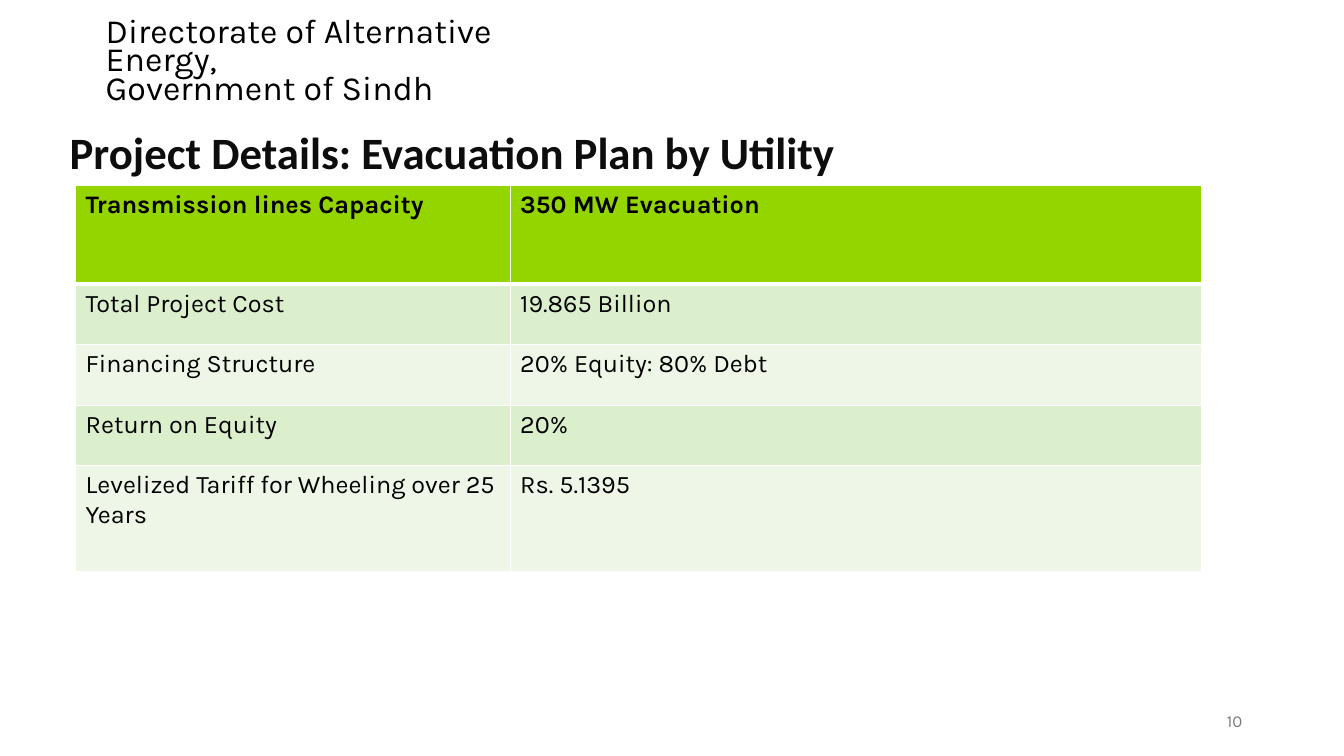
from dataclasses import dataclass

from lxml.etree import SubElement
from pptx import Presentation
from pptx.dml.color import RGBColor
from pptx.enum.text import MSO_ANCHOR, MSO_AUTO_SIZE, PP_ALIGN
from pptx.oxml import parse_xml
from pptx.oxml.ns import nsdecls, qn
from pptx.util import Inches, Pt


@dataclass(frozen=True)
class Theme:
    body_font: str = "Karla"
    title_font: str = "Calibri"
    black: str = "000000"
    title_color: str = "0D0D0D"
    grey: str = "797979"
    border: str = "FFFFFF"
    header_fill: str = "94D500"
    band_fills: tuple = ("DCEFCC", "EEF7E7")
    title_size: float = 32
    agency_size: float = 24.2
    table_size: float = 18
    number_size: float = 12


theme = Theme()


def write_text(frame, lines, size, color, font=theme.body_font, bold=False,
               align=PP_ALIGN.LEFT, line_spacing=None):
    frame.word_wrap = True
    for index, line in enumerate(lines):
        para = frame.add_paragraph() if index else frame.paragraphs[0]
        para.text = line
        para.alignment = align
        para.line_spacing = line_spacing
        para.font.name = font
        para.font.size = Pt(size)
        para.font.bold = bold
        para.font.color.rgb = RGBColor.from_string(color)


def set_borders(cell, top, bottom):
    """Draw the cell's four edges; top and bottom are widths in points."""
    properties = cell._tc.get_or_add_tcPr()
    edges = {"lnL": 1, "lnR": 1, "lnT": top, "lnB": bottom}
    for index, (tag, width) in enumerate(edges.items()):
        line = parse_xml(f'<a:{tag} {nsdecls("a")} w="{Pt(width)}"/>')
        fill = SubElement(line, qn("a:solidFill"))
        SubElement(fill, qn("a:srgbClr"), val=theme.border)
        properties.insert(index, line)


deck = Presentation()
deck.slide_width = Inches(13.33)
deck.slide_height = Inches(7.5)
page = deck.slides.add_slide(deck.slide_layouts[5])

# Title
title = page.shapes.title
title.left, title.top = Inches(0.59), Inches(1.2)
title.width, title.height = Inches(8.25), Inches(0.67)
title.text_frame.auto_size = MSO_AUTO_SIZE.NONE
title.text_frame.vertical_anchor = MSO_ANCHOR.MIDDLE
write_text(title.text_frame, ["Project Details: Evacuation Plan by Utility"],
           theme.title_size, theme.title_color, font=theme.title_font,
           bold=True, line_spacing=0.9)

# Agency name
agency = page.shapes.add_textbox(Inches(0.95), Inches(0.24), Inches(4.64), Inches(0.77))
agency.text_frame.vertical_anchor = MSO_ANCHOR.MIDDLE
write_text(agency.text_frame,
           ["Directorate of Alternative Energy,", "Government of Sindh"],
           theme.agency_size, theme.black, line_spacing=0.7)

# Project table
rows = [
    ("Transmission lines Capacity", "350 MW Evacuation"),
    ("Total Project Cost", "19.865 Billion"),
    ("Financing Structure", "20% Equity: 80% Debt"),
    ("Return on Equity", "20%"),
    ("Levelized Tariff for Wheeling over 25 Years", "Rs. 5.1395"),
]
row_heights = [0.98, 0.6, 0.6, 0.6, 1.05]
column_widths = [4.31, 6.86]

table = page.shapes.add_table(
    len(rows), len(column_widths), Inches(0.75), Inches(1.84),
    Inches(sum(column_widths)), Inches(sum(row_heights))).table
table.horz_banding = False
for column, width in zip(table.columns, column_widths):
    column.width = Inches(width)

for row_index, (values, height) in enumerate(zip(rows, row_heights)):
    table.rows[row_index].height = Inches(height)
    is_header = row_index == 0
    fill = theme.header_fill if is_header else theme.band_fills[(row_index - 1) % 2]
    for column_index, value in enumerate(values):
        cell = table.cell(row_index, column_index)
        cell.fill.solid()
        cell.fill.fore_color.rgb = RGBColor.from_string(fill)
        set_borders(cell, top=3 if row_index == 1 else 1, bottom=3 if is_header else 1)
        write_text(cell.text_frame, [value], theme.table_size, theme.black, bold=is_header)
table.cell(len(rows) - 1, 1).text_frame.paragraphs[0].alignment = PP_ALIGN.JUSTIFY

# Page number
number = page.shapes.add_textbox(Inches(9.42), Inches(6.95), Inches(3), Inches(0.4))
number.text_frame.vertical_anchor = MSO_ANCHOR.MIDDLE
write_text(number.text_frame, ["10"], theme.number_size, theme.grey, align=PP_ALIGN.RIGHT)

deck.save("out.pptx")
